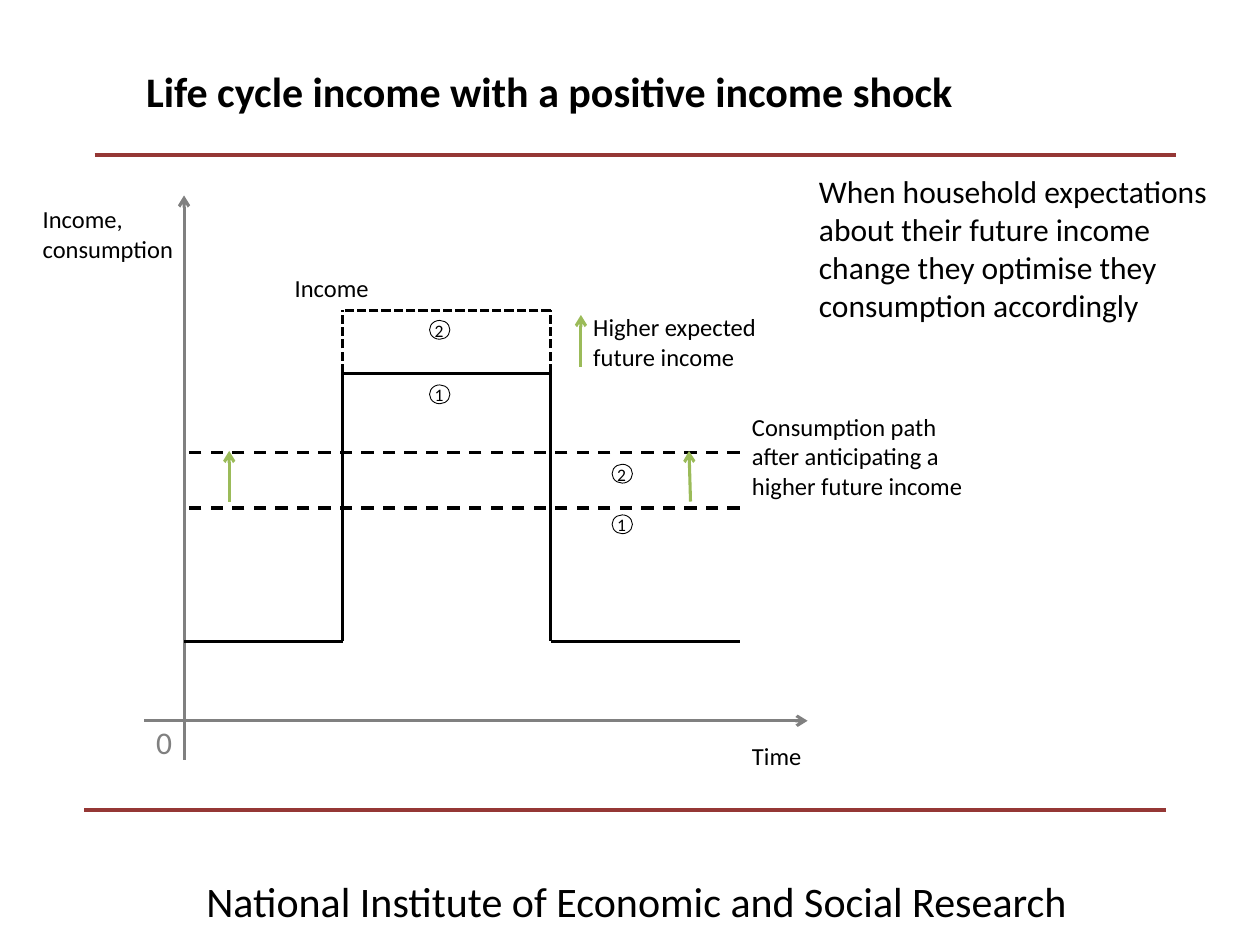
from dataclasses import dataclass

from lxml.etree import SubElement
from pptx import Presentation
from pptx.dml.color import RGBColor
from pptx.enum.dml import MSO_LINE
from pptx.enum.shapes import MSO_CONNECTOR, MSO_SHAPE
from pptx.enum.text import MSO_ANCHOR, MSO_AUTO_SIZE, PP_ALIGN
from pptx.oxml.ns import qn
from pptx.util import Cm, Pt


@dataclass(frozen=True)
class Theme:
    font: str = "Calibri"
    black: RGBColor = RGBColor(0x00, 0x00, 0x00)
    grey: RGBColor = RGBColor(0x80, 0x80, 0x80)
    rule: RGBColor = RGBColor(0x95, 0x37, 0x35)
    shift: RGBColor = RGBColor(0x9B, 0xBB, 0x59)
    heading: int = 24
    body: int = 18
    label: int = 14
    marker: int = 10


THEME = Theme()

# Time points and levels of the diagram, in cm
START, RISE, FALL, END = 3.71, 6.91, 11.1, 14.91
LOW_INCOME, INCOME, HIGHER_INCOME = 12.93, 7.52, 6.25
CONSUMPTION, HIGHER_CONSUMPTION = 10.24, 9.12


def write(frame, text, size=THEME.label, color=THEME.black, bold=False):
    """Fill a text frame, one paragraph for each line of text."""
    frame.text = text
    frame.word_wrap = True
    frame.vertical_anchor = MSO_ANCHOR.TOP
    for paragraph in frame.paragraphs:
        paragraph.alignment = PP_ALIGN.LEFT
        font = paragraph.font
        font.name, font.size, font.bold = THEME.font, Pt(size), bold
        font.color.rgb = color


def add_label(slide, text, left, top, width, height, **text_format):
    label = slide.shapes.add_textbox(Cm(left), Cm(top), Cm(width), Cm(height))
    write(label.text_frame, text, **text_format)


def add_line(slide, start, end, color=THEME.black, weight=1.75, dash=None, arrow=False):
    """Draw a straight line; an arrow has its head at the start."""
    points = [Cm(value) for value in (*start, *end)]
    connector = slide.shapes.add_connector(MSO_CONNECTOR.STRAIGHT, *points)
    connector.line.color.rgb = color
    connector.line.width = Pt(weight)
    if dash is not None:
        connector.line.dash_style = dash
    if arrow:
        SubElement(connector.line._get_or_add_ln(), qn("a:headEnd"), type="arrow")
    SubElement(connector._element.spPr, qn("a:effectLst"))


def add_marker(slide, number, left, top):
    """Put a number in a thin circle."""
    add_label(slide, number, left, top, 0.79, 0.69, size=THEME.marker)
    circle = slide.shapes.add_shape(
        MSO_SHAPE.OVAL, Cm(left + 0.15), Cm(top + 0.14), Cm(0.41), Cm(0.38))
    circle.shadow.inherit = False
    circle.fill.background()
    circle.line.color.rgb = THEME.black
    circle.line.width = Pt(0.5)


def add_frame(slide):
    # Title, rules and institute name
    title = slide.shapes.title
    title.left, title.top, title.width, title.height = Cm(2.69), Cm(1.19), Cm(20.4), Cm(1.27)
    write(title.text_frame, "Life cycle income with a positive income shock",
          size=THEME.heading, bold=True)
    title.text_frame.auto_size = MSO_AUTO_SIZE.NONE
    for left, level in ((1.91, 3.12), (1.7, 16.33)):
        add_line(slide, (left, level), (left + 21.8, level), color=THEME.rule, weight=2.25)
    add_label(slide, "National Institute of Economic and Social Research",
              3.91, 17.53, 20.19, 1.02, size=THEME.heading)


def add_axes(slide):
    add_line(slide, (START, 3.94), (START, 15.32), color=THEME.grey, arrow=True)
    add_line(slide, (16.28, 14.53), (2.9, 14.53), color=THEME.grey, arrow=True)
    add_label(slide, "Income,\nconsumption", 0.61, 3.99, 3.99, 1.45)
    add_label(slide, "Time", END, 14.81, 3.4, 1.63)
    add_label(slide, "0", 2.9, 14.45, 3.4, 1.02, size=THEME.body, color=THEME.grey)


def add_paths(slide):
    # Income before the shock
    add_line(slide, (RISE, LOW_INCOME), (START, LOW_INCOME))
    add_line(slide, (END, LOW_INCOME), (FALL, LOW_INCOME))
    add_line(slide, (FALL, INCOME), (RISE, INCOME))
    # Higher expected income
    add_line(slide, (FALL, HIGHER_INCOME), (RISE, HIGHER_INCOME), dash=MSO_LINE.SQUARE_DOT)
    for time in (RISE, FALL):
        add_line(slide, (time, INCOME), (time, LOW_INCOME))
        add_line(slide, (time, INCOME), (time, HIGHER_INCOME), dash=MSO_LINE.SQUARE_DOT)
    # Consumption before and after
    for level in (CONSUMPTION, HIGHER_CONSUMPTION):
        add_line(slide, (END, level), (START, level), dash=MSO_LINE.DASH)
    # Upward shifts
    for tip, foot in (((11.71, 6.35), (11.71, 7.39)),
                      ((4.62, 9.09), (4.62, 10.11)),
                      ((13.89, 9.09), (13.92, 10.11))):
        add_line(slide, tip, foot, color=THEME.shift, arrow=True)


def add_notes_on_paths(slide):
    add_label(slide, "Income", 5.69, 5.38, 5, 0.86)
    add_label(slide, "Higher expected future income", 11.71, 6.17, 5, 1.45)
    add_label(slide, "Consumption path after anticipating a higher future income",
              END, 8.18, 5, 2.06)
    add_label(slide, "When household expectations about their future income change "
              "they optimise they consumption accordingly",
              16.26, 3.35, 8.79, 3.33, size=THEME.body)
    for number, left, top in (("1", 12.19, 10.24), ("2", 12.19, 9.22),
                              ("1", 8.51, 7.62), ("2", 8.51, 6.32)):
        add_marker(slide, number, left, top)


def main():
    deck = Presentation()
    deck.slide_width, deck.slide_height = Cm(25.4), Cm(19.05)
    slide = deck.slides.add_slide(deck.slide_layouts[5])
    add_frame(slide)
    add_axes(slide)
    add_paths(slide)
    add_notes_on_paths(slide)
    deck.save("out.pptx")


if __name__ == "__main__":
    main()
